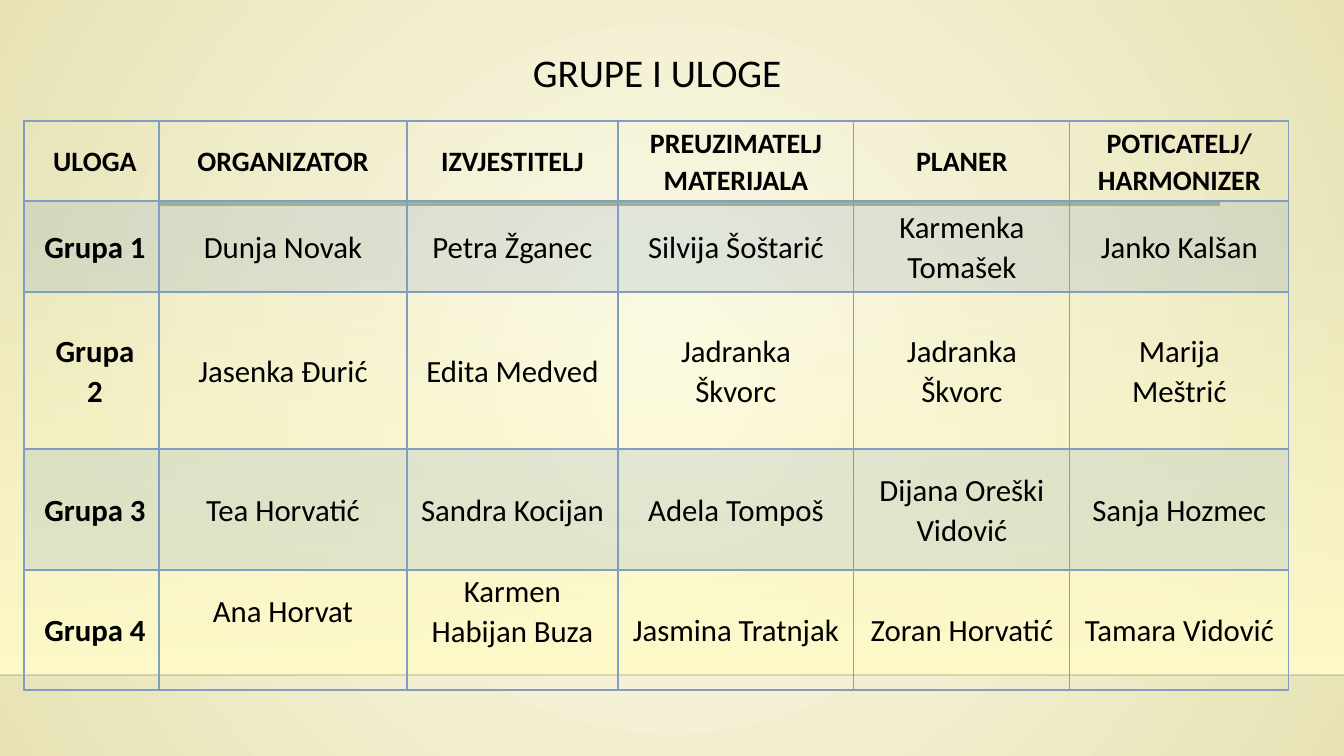
from lxml.etree import SubElement
from pptx import Presentation
from pptx.dml.color import RGBColor
from pptx.enum.shapes import MSO_CONNECTOR, MSO_SHAPE
from pptx.enum.text import MSO_ANCHOR, PP_ALIGN
from pptx.oxml import parse_xml
from pptx.oxml.ns import nsdecls, qn
from pptx.util import Pt

WIDTH, HEIGHT = 1344, 756
EMU_PER_PX = 12192000 / WIDTH

COLORS = {
    "center": "FCFBEA",
    "edge": "E7E3B6",
    "floor": "FEFAC9",
    "horizon": "000001",
    "accent": "A5B592",
    "grid": "809EC2",
    "text": "000000",
}

COLUMN_WIDTHS = [135, 248, 211, 236, 216, 219]
ROW_HEIGHTS = [80, 91, 157, 121, 120]
ROWS = [
    ["ULOGA", "ORGANIZATOR", "IZVJESTITELJ", "PREUZIMATELJ MATERIJALA",
     "PLANER", "POTICATELJ/\nHARMONIZER"],
    ["Grupa 1", "Dunja Novak", "Petra Žganec", "Silvija Šoštarić",
     "Karmenka Tomašek", "Janko Kalšan"],
    ["Grupa\n2", "Jasenka Đurić", "Edita Medved", "Jadranka\nŠkvorc",
     "Jadranka\nŠkvorc", "Marija\nMeštrić"],
    ["Grupa 3", "Tea Horvatić", "Sandra Kocijan", "Adela Tompoš",
     "Dijana Oreški Vidović", "Sanja Hozmec"],
    ["Grupa 4", "Ana Horvat", "Karmen Habijan Buza", "Jasmina Tratnjak",
     "Zoran Horvatić", "Tamara Vidović"],
]
RAISED_CELLS = {(4, 1), (4, 2)}


def px(length):
    return round(length * EMU_PER_PX)


def color(name):
    return RGBColor.from_string(COLORS[name])


def set_attributes(target, values):
    for name, value in values.items():
        setattr(target, name, value)


def format_paragraph(paragraph, size, bold=False, spacing=1.0):
    set_attributes(paragraph, {"alignment": PP_ALIGN.CENTER, "line_spacing": spacing})
    set_attributes(paragraph.font, {"name": "Calibri", "size": Pt(size), "bold": bold})
    paragraph.font.color.rgb = color("text")


def set_alpha(fill_parent, percent):
    """Make the first RGB colour inside the element partly transparent."""
    first_color = next(fill_parent.iter(qn("a:srgbClr")))
    SubElement(first_color, qn("a:alpha"), val=str(percent * 1000))


def set_gradient(fill, names):
    fill.gradient()
    for stop, name in zip(fill.gradient_stops, names):
        stop.color.rgb = color(name)


def paint_background(slide):
    set_gradient(slide.background.fill, ["center", "edge"])
    gradient = next(slide.element.iter(qn("a:gradFill")))
    gradient.remove(gradient.find(qn("a:lin")))
    gradient.append(parse_xml(
        f'<a:path {nsdecls("a")} path="circle">'
        '<a:fillToRect l="50000" t="50000" r="50000" b="50000"/></a:path>'))


def add_floor(slide, top, height):
    floor = slide.shapes.add_shape(
        MSO_SHAPE.RECTANGLE, 0, px(top), px(WIDTH), px(height))
    floor.shadow.inherit = False
    floor.line.fill.background()
    set_gradient(floor.fill, ["floor", "floor"])
    floor.fill.gradient_angle = 270
    set_alpha(floor.element.spPr, 0)


def add_rule(slide, left, right, y, color_name, weight, alpha=100):
    rule = slide.shapes.add_connector(
        MSO_CONNECTOR.STRAIGHT, px(left), px(y), px(right), px(y))
    rule.line.color.rgb = color(color_name)
    rule.line.width = Pt(weight)
    properties = rule.element.spPr
    if alpha < 100:
        set_alpha(properties, alpha)
    SubElement(properties, qn("a:effectLst"))


def add_title(slide, text):
    title = slide.shapes.title
    set_attributes(title, {"left": px(402), "top": px(43),
                           "width": px(510), "height": px(57)})
    title.text_frame.text = text
    title.text_frame.vertical_anchor = MSO_ANCHOR.MIDDLE
    format_paragraph(title.text_frame.paragraphs[0], 28)


def set_borders(cell, weights):
    properties = cell._tc.get_or_add_tcPr()
    for index, (side, weight) in enumerate(weights.items()):
        properties.insert(index, parse_xml(
            f'<a:ln{side} {nsdecls("a")} w="{Pt(weight)}"><a:solidFill>'
            f'<a:srgbClr val="{COLORS["grid"]}"/></a:solidFill></a:ln{side}>'))


def fill_cell(cell, row, column, text):
    cell.text = text
    set_attributes(cell, {
        "vertical_anchor": MSO_ANCHOR.MIDDLE,
        "margin_left": px(14 if column == 0 else 7),
        "margin_right": px(7),
        "margin_top": 0,
        "margin_bottom": px(38 if (row, column) in RAISED_CELLS else 0),
    })
    for paragraph in cell.text_frame.paragraphs:
        format_paragraph(paragraph, 20 if row == 0 else 22,
                         bold=row == 0 or column == 0, spacing=1.07)
    if row % 2:
        cell.fill.solid()
        cell.fill.fore_color.rgb = color("grid")
        set_alpha(cell._tc.tcPr, 20)
    else:
        cell.fill.background()
    set_borders(cell, {"L": 1, "R": 1, "T": 2 if row == 1 else 1,
                       "B": 2 if row == 0 else 1})


def add_role_table(slide):
    table = slide.shapes.add_table(
        len(ROWS), len(COLUMN_WIDTHS), px(24), px(121),
        px(sum(COLUMN_WIDTHS)), px(sum(ROW_HEIGHTS))).table
    set_attributes(table, {"first_row": False, "horz_banding": False})
    for column, width in zip(table.columns, COLUMN_WIDTHS):
        column.width = px(width)
    for row, height in zip(table.rows, ROW_HEIGHTS):
        row.height = px(height)
    for row, texts in enumerate(ROWS):
        for column, text in enumerate(texts):
            fill_cell(table.cell(row, column), row, column, text)


def main():
    presentation = Presentation()
    presentation.slide_width = px(WIDTH)
    presentation.slide_height = px(HEIGHT)
    slide = presentation.slides.add_slide(presentation.slide_layouts[5])
    paint_background(slide)
    add_floor(slide, 223, 452)
    add_rule(slide, 0, WIDTH, 675, "horizon", 1, alpha=20)
    add_rule(slide, 160, 1220, 204, "accent", 2.5)
    add_role_table(slide)
    add_title(slide, "GRUPE I ULOGE")
    presentation.save("out.pptx")


if __name__ == "__main__":
    main()
